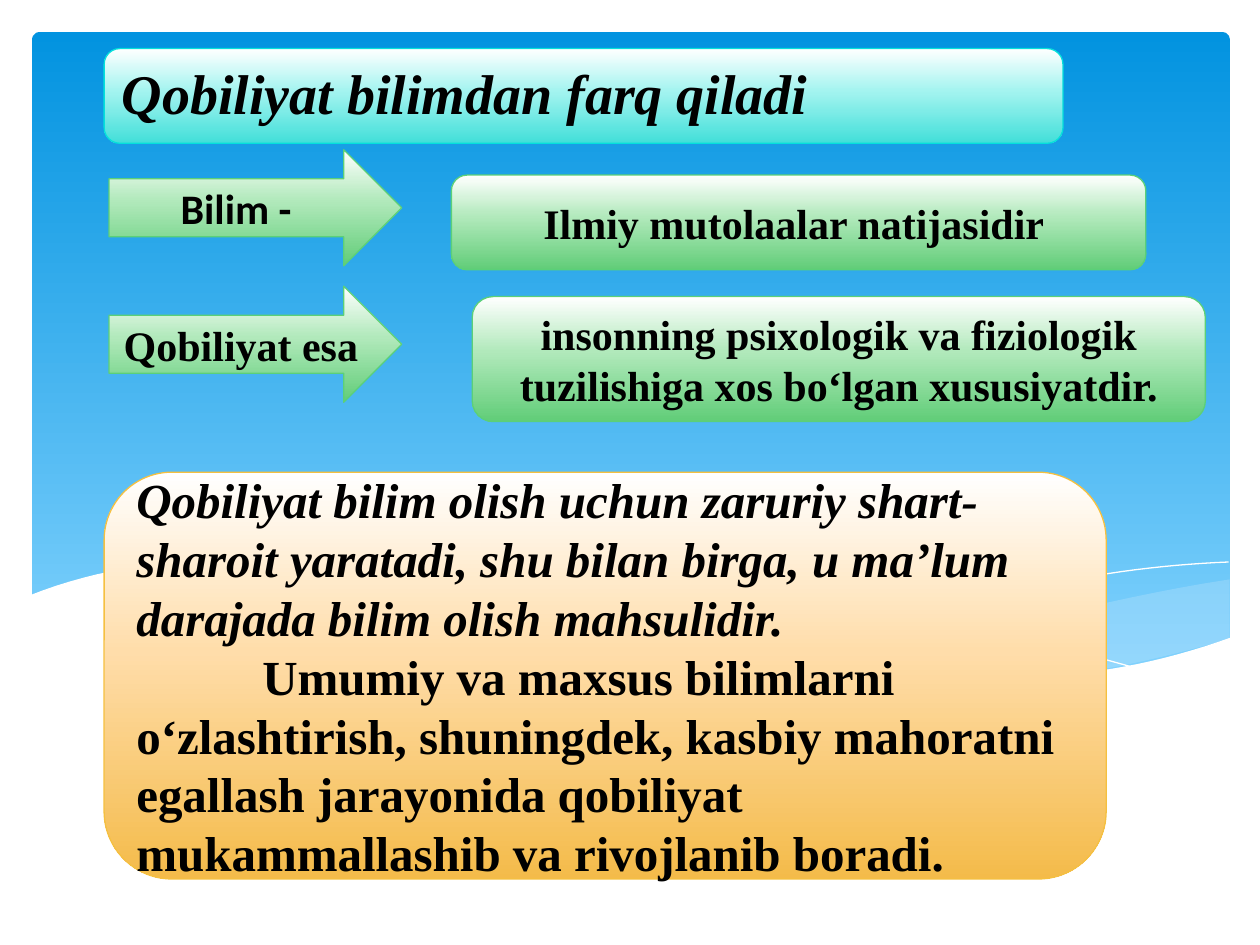
from copy import deepcopy
from lxml.etree import SubElement
from pptx import Presentation
from pptx.dml.color import RGBColor
from pptx.enum.shapes import MSO_SHAPE as SHAPE
from pptx.enum.text import MSO_ANCHOR as ANCHOR, PP_ALIGN as ALIGN
from pptx.oxml.ns import qn
from pptx.util import Cm, Pt


def paint(sp, stops=(), line=None, width=0.75, alpha=None):
    """Fill with one colour or a downward gradient of (position, colour)."""
    sp.shadow.inherit = False
    fill = sp.fill
    if len(stops) > 1:
        fill.gradient()
        fill.gradient_angle = 270
        gs_list = sp._element.spPr.find(".//" + qn("a:gsLst"))
        while len(gs_list) < len(stops):
            gs_list.append(deepcopy(gs_list[0]))
        for stop, (position, color) in zip(fill.gradient_stops, stops):
            stop.position = position
            stop.color.rgb = RGBColor.from_string(color)
    elif stops:
        fill.solid()
        fill.fore_color.rgb = RGBColor.from_string(stops[0][1])
        if alpha:
            clr = sp._element.spPr.find(".//" + qn("a:srgbClr"))
            SubElement(clr, qn("a:alpha")).set("val", str(alpha * 1000))
    else:
        fill.background()
    if line:
        sp.line.color.rgb = RGBColor.from_string(line)
        sp.line.width = Pt(width)
    else:
        sp.line.fill.background()


def write(p, text, size=24, font="Times New Roman", color="000000",
          italic=False, align=ALIGN.CENTER):
    """Add bold text to a paragraph."""
    p.alignment = align
    r = p.add_run()
    r.text = text
    r.font.size, r.font.name = Pt(size), font
    r.font.bold, r.font.italic = True, italic
    r.font.color.rgb = RGBColor.from_string(color)


prs = Presentation()
prs.slide_width, prs.slide_height = Cm(25.4), Cm(19.05)
s = prs.slides.add_slide(prs.slide_layouts[5])  # title only

# Looks: fill and line of each kind of part
SKY = dict(stops=[(0, "0293E0"), (1, "83D3FE")])
WHITE = dict(stops=[(0, "FFFFFF")])
HAIRLINE = dict(line="FFFFFF", width=0)
PALE = [(0, "C6E7FC")]
AQUA, GREEN, ORANGE = [
    dict(stops=[(0, "FFFFFF"), (0.44, middle), (1, bottom)], line=line)
    for middle, bottom, line in [("A5F4F0", "42DFD9", "05E0DB"),
                                 ("B1E9BB", "61CD78", "5BD078"),
                                 ("FFDDAA", "F4BB4A", "F5C040")]]

# Sky panel
sky = s.shapes.add_shape(SHAPE.ROUNDED_RECTANGLE,
                         Cm(0.64), Cm(0.64), Cm(24.16), Cm(13.16))
sky.adjustments[0] = 0.013
paint(sky, **SKY)

# Waves, back to front: upper edge, lower edge (none for a line) and look.
# Each edge is a few knots (x, y, slope) in cm, joined by smooth cubics.
waves = [
    ([(16.79, 13.34, -0.16), (24.79, 11.68, -0.15)],
     [(16.79, 13.34, 0.13), (20.3, 13.67, 0), (24.79, 12.88, -0.28)],
     dict(stops=PALE, alpha=29)),
    ([(7.26, 11.48, -0.12), (9.3, 11.32, 0), (17.93, 12.7, 0.23),
      (22.68, 13.54, 0.14)],
     [(7.26, 11.48, 0.13), (13.46, 12.73, 0.22), (20.8, 13.69, 0),
      (22.68, 13.54, -0.1)],
     dict(stops=PALE, alpha=40)),
    ([(7.85, 11.58, -0.1), (10.8, 11.35, 0), (16.89, 12.01, 0.21),
      (23.04, 13.51, 0.29)], [], HAIRLINE),
    ([(15.57, 13.13, -0.27), (20.47, 11.94, -0.25), (24.77, 11.33, -0.04)],
     [], HAIRLINE),
    ([(0.58, 12.01, -0.4), (5, 11.27, 0), (20.5, 13.64, 0),
      (24.82, 12.85, -0.36)],
     [(0.58, 14.96, 0), (24.82, 14.96, 0)], WHITE)]
STEPS = 16      # points per cubic
UNITS = 1000    # freeform units per cm, since its points are whole numbers

for upper, lower, look in waves:
    outline = []
    for knots in (upper, lower):
        edge = []
        for (x0, y0, m0), (x1, y1, m1) in zip(knots, knots[1:]):
            w = x1 - x0
            for i in range(STEPS + 1):
                t = i / STEPS
                ease = t * t * (3 - 2 * t)
                bend = w * t * (1 - t) * (m0 * (1 - t) - m1 * t)
                edge.append(((x0 + w * t) * UNITS,
                             (y0 + (y1 - y0) * ease + bend) * UNITS))
        outline += edge if knots is upper else edge[::-1]
    builder = s.shapes.build_freeform(*outline[0], scale=Cm(1) / UNITS)
    builder.add_line_segments(outline[1:], close=bool(lower))
    paint(builder.convert_to_shape(), **look)

# Title box, arrows with their definitions, and the conclusion
ARROW, BOX = SHAPE.RIGHT_ARROW, SHAPE.ROUNDED_RECTANGLE
conclusion = dict(size=28, align=ALIGN.LEFT)
panels = [
    (BOX, (2.1, 0.98, 19.33, 1.91), AQUA, []),
    (ARROW, (2.2, 3.02, 5.9, 2.34), GREEN,
     [("Bilim - ", dict(font="Calibri"))]),
    (BOX, (9.1, 3.53, 14, 1.91), GREEN,
     [("Ilmiy mutolaalar natijasidir ", {})]),
    (ARROW, (2.2, 5.77, 5.9, 2.34), GREEN,
     [("Qobiliyat esa ", {})]),
    (BOX, (9.52, 5.98, 14.78, 2.52), GREEN,
     [("insonning psixologik va fiziologik tuzilishiga xos "
       "bo‘lgan xususiyatdir.", {})]),
    (BOX, (2.1, 9.52, 20.2, 8.2), ORANGE,
     [("Qobiliyat bilim olish uchun zaruriy shart-sharoit yaratadi, shu "
       "bilan birga, u ma’lum darajada bilim olish mahsulidir.",
       dict(conclusion, italic=True)),
      ("Umumiy va maxsus bilimlarni o‘zlashtirish, shuningdek, kasbiy "
       "mahoratni egallash jarayonida qobiliyat mukammallashib va "
       "rivojlanib boradi.", conclusion)])]

for kind, box, look, texts in panels:
    sp = s.shapes.add_shape(kind, *map(Cm, box))
    paint(sp, **look)
    tf = sp.text_frame
    tf.word_wrap = True
    tf.vertical_anchor = ANCHOR.MIDDLE
    for i, (text, style) in enumerate(texts):
        p = tf.add_paragraph() if i else tf.paragraphs[0]
        write(p, text, **style)

# First-line indent of the closing paragraph
p._p.get_or_add_pPr().set("indent", str(Cm(2.54)))

# Title, raised in front of its box
title = s.shapes.title
title.left, title.top, title.width, title.height = map(Cm, (2.2, 0.9, 19.1, 1.91))
title.text_frame.vertical_anchor = ANCHOR.MIDDLE
write(title.text_frame.paragraphs[0], "Qobiliyat bilimdan farq qiladi",
      size=32, italic=True, align=ALIGN.LEFT)
s.shapes._spTree.append(title._element)

prs.save("out.pptx")
